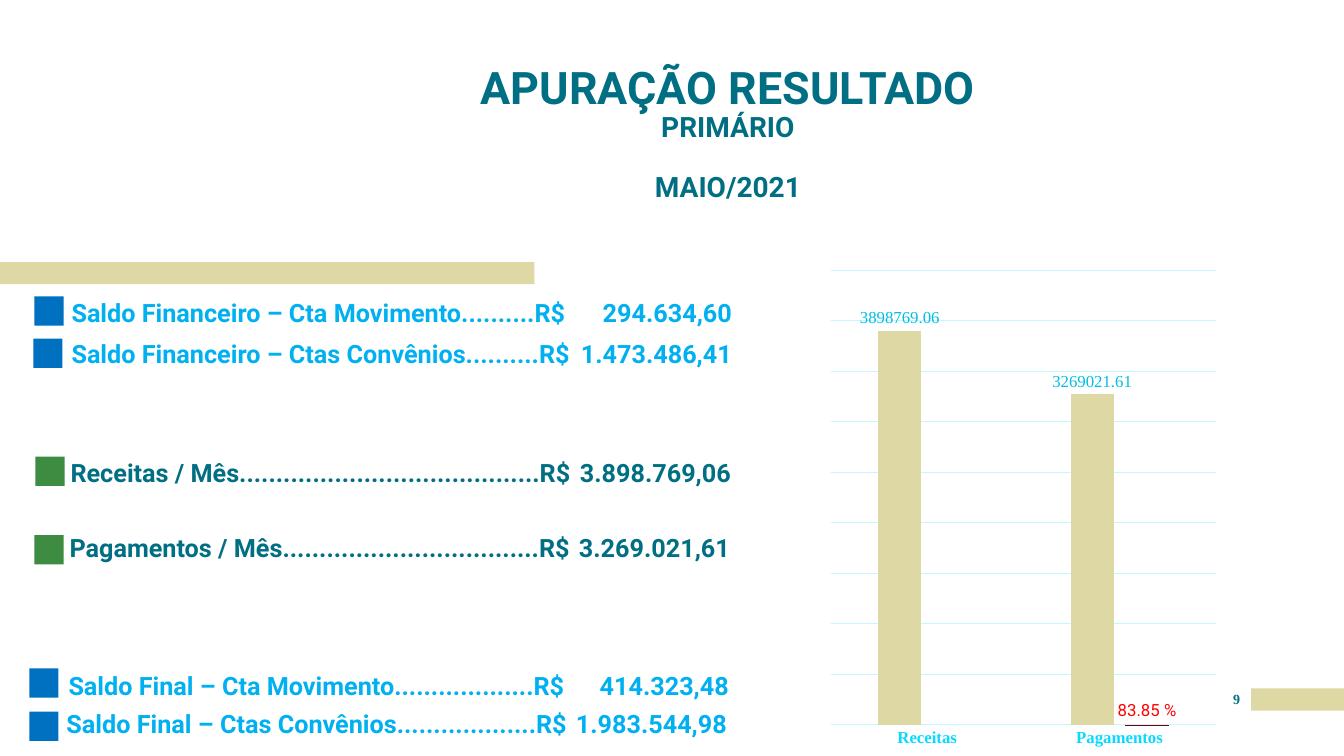
from dataclasses import dataclass

import lxml.etree
import pptx
import pptx.chart.data
import pptx.dml.color
import pptx.enum.chart
import pptx.enum.shapes
import pptx.enum.text
import pptx.oxml
import pptx.oxml.ns
import pptx.util
from pptx.util import Inches


@dataclass(frozen=True)
class Theme:
    sans: str = "Roboto"
    serif: str = "Times New Roman"
    teal: str = "006F83"
    sky: str = "00B0F0"
    blue: str = "0070C0"
    green: str = "3D8C41"
    sand: str = "DED8A4"
    grid: str = "C6F6FF"
    category: str = "09D9FF"
    value: str = "00BFE2"
    maroon: str = "790000"
    red: str = "FF0000"
    title_size: int = 32
    subtitle_size: int = 20
    body_size: int = 18
    label_size: int = 12
    small_size: int = 10


THEME = Theme()
AMOUNT_STOP = Inches(6.55)
MARKER_SIZE = 0.29

# Marker left, top; text left, top, height; label; amount; colours
BALANCES = [
    (0.34, 2.94, 0.71, 2.87, 0.38, "Saldo Financeiro – Cta Movimento..........R$",
     "294.634,60", THEME.blue, THEME.sky),
    (0.33, 3.36, 0.71, 3.28, 0.38, "Saldo Financeiro – Ctas Convênios..........R$",
     "1.473.486,41", THEME.blue, THEME.sky),
    (0.35, 4.53, 0.70, 4.46, 0.38, "Receitas / Mês" + "." * 41 + "R$",
     "3.898.769,06", THEME.green, THEME.teal),
    (0.34, 5.31, 0.69, 5.20, 0.38, "Pagamentos / Mês" + "." * 35 + "R$",
     "3.269.021,61", THEME.green, THEME.teal),
    (0.29, 6.63, 0.68, 6.50, 0.45, "Saldo Final – Cta Movimento...................R$",
     "414.323,48", THEME.blue, THEME.sky),
    (0.29, 7.06, 0.66, 6.95, 0.38, "Saldo Final – Ctas Convênios...................R$",
     "1.983.544,98", THEME.blue, THEME.sky),
]


def rgb(colour):
    return pptx.dml.color.RGBColor.from_string(colour)


def style_font(font, name, size, colour, bold=False):
    font.name = name
    font.size = pptx.util.Pt(size)
    font.color.rgb = rgb(colour)
    font.bold = bold


def add_block(slide, left, top, width, height, colour):
    shape = slide.shapes.add_shape(
        pptx.enum.shapes.MSO_SHAPE.RECTANGLE,
        Inches(left), Inches(top), Inches(width), Inches(height))
    shape.shadow.inherit = False
    shape.fill.solid()
    shape.fill.fore_color.rgb = rgb(colour)
    shape.line.fill.background()


def add_text_frame(slide, left, top, width, height, anchor):
    box = slide.shapes.add_textbox(
        Inches(left), Inches(top), Inches(width), Inches(height))
    frame = box.text_frame
    frame.word_wrap = True
    frame.vertical_anchor = anchor
    frame.margin_left = frame.margin_right = 0
    frame.margin_top = frame.margin_bottom = 0
    return frame


def add_title(slide):
    frame = add_text_frame(slide, 4.05, 0.11, 6.34, 2.25,
                           pptx.enum.text.MSO_ANCHOR.BOTTOM)
    frame.margin_bottom = Inches(0.34)
    frame.text = "APURAÇÃO RESULTADO\nPRIMÁRIO\nMAIO/2021"
    sizes = (THEME.title_size, THEME.subtitle_size, THEME.subtitle_size)
    for paragraph, size in zip(frame.paragraphs, sizes):
        paragraph.alignment = pptx.enum.text.PP_ALIGN.CENTER
        paragraph.line_spacing = 0.9
        style_font(paragraph.runs[0].font, THEME.sans, size, THEME.teal, True)
    frame.paragraphs[-1].space_before = pptx.util.Pt(21)


def add_amount_stop(paragraph):
    properties = paragraph._p.get_or_add_pPr()
    stops = lxml.etree.SubElement(properties, pptx.oxml.ns.qn("a:tabLst"))
    lxml.etree.SubElement(stops, pptx.oxml.ns.qn("a:tab"),
                          pos=str(int(AMOUNT_STOP)), algn="r")


def add_balance(slide, marker_left, marker_top, left, top, height,
                label, amount, marker_colour, text_colour):
    add_block(slide, marker_left, marker_top, MARKER_SIZE, MARKER_SIZE, marker_colour)
    frame = add_text_frame(slide, left, top, 7.5, height,
                           pptx.enum.text.MSO_ANCHOR.BOTTOM)
    paragraph = frame.paragraphs[0]
    paragraph.text = f"{label}\t{amount}"
    paragraph.line_spacing = 0.9
    add_amount_stop(paragraph)
    for run in paragraph.runs:
        style_font(run.font, THEME.sans, THEME.body_size, text_colour, True)


def set_plot_layout(chart, x, y, width, height):
    plot_area = chart._chartSpace.chart.plotArea
    for layout in plot_area.findall(pptx.oxml.ns.qn("c:layout")):
        plot_area.remove(layout)
    plot_area.insert(0, pptx.oxml.parse_xml(
        f'<c:layout {pptx.oxml.ns.nsdecls("c")}><c:manualLayout>'
        '<c:layoutTarget val="inner"/><c:xMode val="edge"/><c:yMode val="edge"/>'
        f'<c:x val="{x}"/><c:y val="{y}"/><c:w val="{width}"/><c:h val="{height}"/>'
        '</c:manualLayout></c:layout>'))


def style_series(series, fill, font_name, label_colour, number_format):
    series.format.fill.solid()
    series.format.fill.fore_color.rgb = rgb(fill)
    series.invert_if_negative = False
    labels = series.data_labels
    labels.show_value = True
    labels.number_format = number_format
    labels.number_format_is_linked = False
    labels.position = pptx.enum.chart.XL_LABEL_POSITION.OUTSIDE_END
    style_font(labels.font, font_name, THEME.label_size, label_colour)


def style_line(line):
    line.color.rgb = rgb(THEME.grid)
    line.width = pptx.util.Pt(0.75)


def add_result_chart(slide):
    data = pptx.chart.data.CategoryChartData()
    data.categories = ["Receitas", "Pagamentos"]
    data.add_series("Series 1", [3898769.06, 3269021.61])
    data.add_series("Series 2", [None, 83.85])
    chart = slide.shapes.add_chart(
        pptx.enum.chart.XL_CHART_TYPE.COLUMN_CLUSTERED,
        Inches(7.44), Inches(2.51), Inches(4.93), Inches(4.99), data).chart
    chart.has_title = False
    chart.has_legend = False
    style_font(chart.font, THEME.serif, THEME.small_size, THEME.teal)
    set_plot_layout(chart, 0.163, 0.034, 0.774, 0.904)

    # Columns
    plot = chart.plots[0]
    plot.vary_by_categories = False
    plot.gap_width = 219
    plot.overlap = -27
    amounts, share = plot.series
    style_series(amounts, THEME.sand, THEME.serif, THEME.value, "0.00")
    style_series(share, THEME.maroon, THEME.sans, THEME.red, '0.00" %"')

    # Axes
    value_axis = chart.value_axis
    value_axis.minimum_scale = 0
    value_axis.maximum_scale = 4500000
    value_axis.major_unit = 500000
    value_axis.visible = False
    value_axis.has_major_gridlines = True
    style_line(value_axis.major_gridlines.format.line)
    category_axis = chart.category_axis
    category_axis.major_tick_mark = pptx.enum.chart.XL_TICK_MARK.NONE
    style_line(category_axis.format.line)
    style_font(category_axis.tick_labels.font, THEME.serif, THEME.label_size,
               THEME.category, True)


def add_page_number(slide):
    frame = add_text_frame(slide, 12.12, 6.85, 0.29, 0.25,
                           pptx.enum.text.MSO_ANCHOR.TOP)
    paragraph = frame.paragraphs[0]
    paragraph.text = "9"
    paragraph.alignment = pptx.enum.text.PP_ALIGN.CENTER
    style_font(paragraph.runs[0].font, THEME.serif, THEME.small_size, THEME.teal, True)


def main():
    presentation = pptx.Presentation()
    presentation.slide_width = Inches(13.33)
    presentation.slide_height = Inches(7.5)
    slide = presentation.slides.add_slide(presentation.slide_layouts[6])

    # Side bars
    add_block(slide, 12.41, 6.83, 0.92, 0.22, THEME.sand)
    add_block(slide, 0, 2.6, 5.3, 0.22, THEME.sand)

    # Content
    add_title(slide)
    for balance in BALANCES:
        add_balance(slide, *balance)
    add_result_chart(slide)
    add_page_number(slide)
    presentation.save("out.pptx")


if __name__ == "__main__":
    main()
